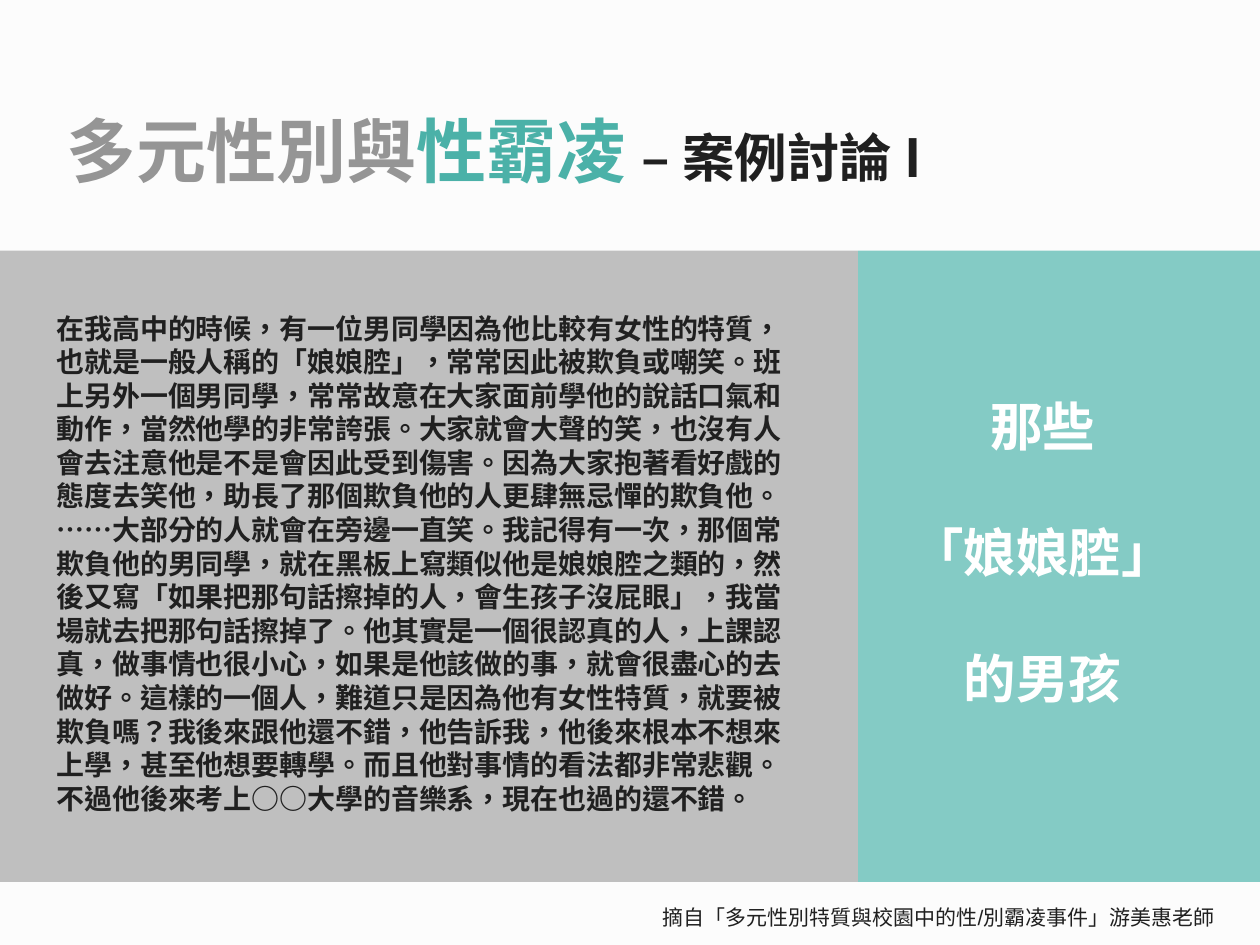
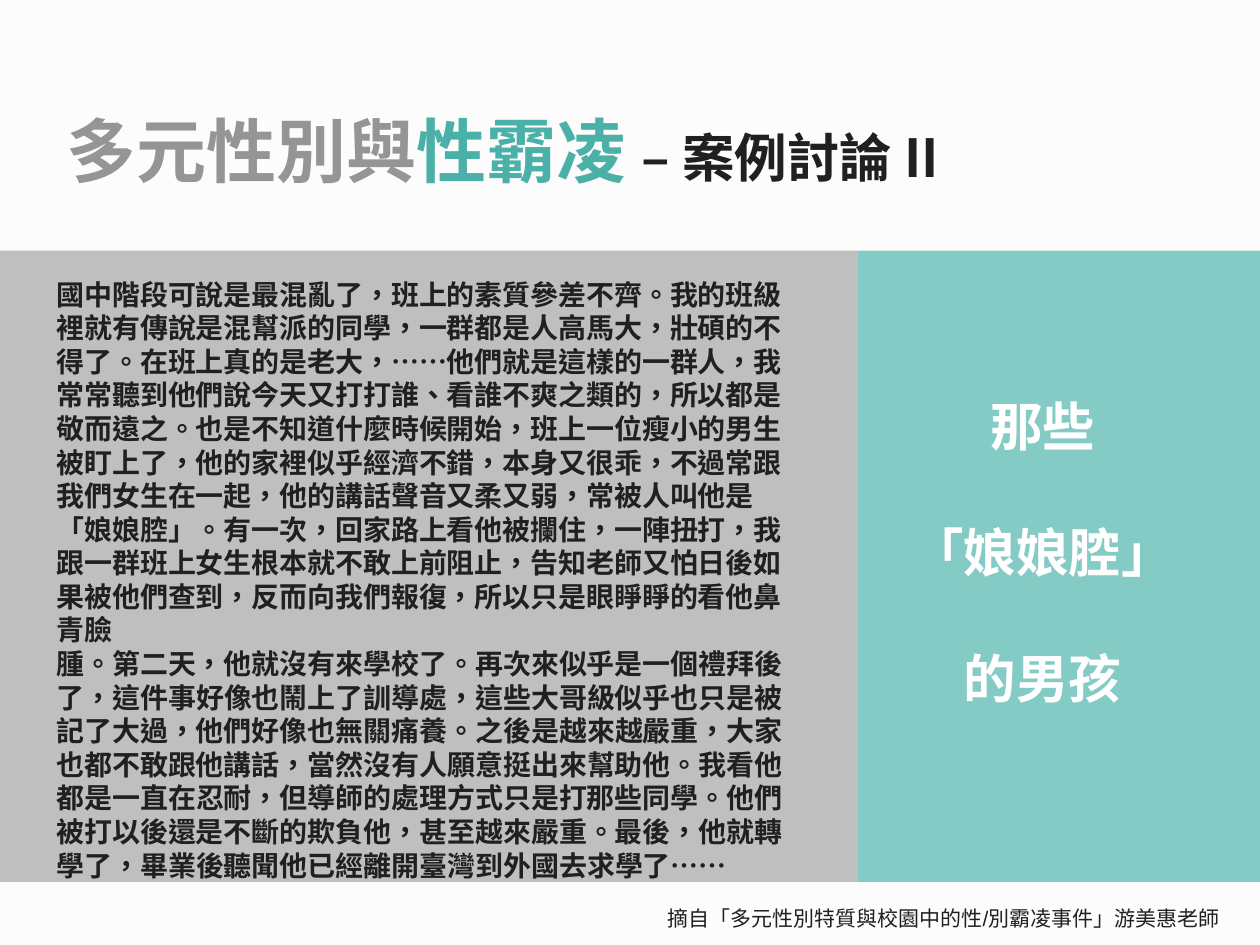
from pptx import Presentation
from pptx.dml.color import RGBColor
from pptx.enum.shapes import MSO_SHAPE
from pptx.enum.text import MSO_ANCHOR, PP_ALIGN
from pptx.util import Inches, Pt
from lxml.etree import SubElement
from pptx.oxml.ns import qn

COLORS = {
    "paper": "FCFCFC", "teal": "84CBC5", "deep": "4BB1A8", "grey": "BFBFBF",
    "dim": "959595", "ink": "202020", "white": "FFFFFF",
}
CJK = "Noto Sans CJK SC"
LABEL = ["那些", "「娘娘腔」", "的男孩"]
CREDIT = "摘自「多元性別特質與校園中的性/別霸凌事件」游美惠老師"

# Band shared by both panels: top and height, in percent of the slide
TOP, DEPTH, SPLIT = 26.53, 66.8, 68.1

# Each case: number, story box (top, height), credit box, story paragraphs
CASES = [
    ("I", (32.27, 55.2), (51.6, 95.07, 47.2, 4), [
        "在我高中的時候，有一位男同學因為他比較有女性的特質，也就是一般人稱的「娘娘腔」，"
        "常常因此被欺負或嘲笑。班上另外一個男同學，常常故意在大家面前學他的說話口氣和動作，"
        "當然他學的非常誇張。大家就會大聲的笑，也沒有人會去注意他是不是會因此受到傷害。"
        "因為大家抱著看好戲的態度去笑他，助長了那個欺負他的人更肆無忌憚的欺負他。"
        "⋯⋯大部分的人就會在旁邊一直笑。我記得有一次，那個常欺負他的男同學，"
        "就在黑板上寫類似他是娘娘腔之類的，然後又寫「如果把那句話擦掉的人，會生孩子沒屁眼」，我當",
        "場就去把那句話擦掉了。他其實是一個很認真的人，上課認真，做事情也很小心，"
        "如果是他該做的事，就會很盡心的去做好。這樣的一個人，難道只是因為他有女性特質，"
        "就要被欺負嗎？我後來跟他還不錯，他告訴我，他後來根本不想來上學，甚至他想要轉學。"
        "而且他對事情的看法都非常悲觀。不過他後來考上○○大學的音樂系，現在也過的還不錯。",
    ]),
    ("II", (28.67, 62.4), (52, 95.2, 48, 4), [
        "國中階段可說是最混亂了，班上的素質參差不齊。我的班級裡就有傳說是混幫派的同學，"
        "一群都是人高馬大，壯碩的不得了。在班上真的是老大，⋯⋯他們就是這樣的一群人，"
        "我常常聽到他們說今天又打打誰、看誰不爽之類的，所以都是敬而遠之。"
        "也是不知道什麼時候開始，班上一位瘦小的男生被盯上了，他的家裡似乎經濟不錯，"
        "本身又很乖，不過常跟我們女生在一起，他的講話聲音又柔又弱，常被人叫他是「娘娘腔」。"
        "有一次，回家路上看他被攔住，一陣扭打，我跟一群班上女生根本就不敢上前阻止，"
        "告知老師又怕日後如果被他們查到，反而向我們報復，所以只是眼睜睜的看他鼻青臉",
        "腫。第二天，他就沒有來學校了。再次來似乎是一個禮拜後了，這件事好像也鬧上了訓導處，"
        "這些大哥級似乎也只是被記了大過，他們好像也無關痛養。之後是越來越嚴重，"
        "大家也都不敢跟他講話，當然沒有人願意挺出來幫助他。我看他都是一直在忍耐，"
        "但導師的處理方式只是打那些同學。他們被打以後還是不斷的欺負他，甚至越來嚴重。"
        "最後，他就轉學了，畢業後聽聞他已經離開臺灣到外國去求學了⋯⋯",
    ]),
]


class Deck:
    def __init__(self):
        self.prs = Presentation()
        self.prs.slide_width, self.prs.slide_height = Inches(10), Inches(7.5)

    def page(self):
        self.slide = self.prs.slides.add_slide(self.prs.slide_layouts[6])
        fill = self.slide.background.fill
        fill.solid()
        fill.fore_color.rgb = RGBColor.from_string(COLORS["paper"])

    def place(self, box):
        """Turn percent shares of the slide into lengths."""
        wide, high = self.prs.slide_width, self.prs.slide_height
        return [int(n * side / 100) for n, side in zip(box, (wide, high) * 2)]

    def panel(self, box, color):
        shape = self.slide.shapes.add_shape(MSO_SHAPE.RECTANGLE, *self.place(box))
        shape.shadow.inherit = False
        shape.fill.solid()
        shape.fill.fore_color.rgb = RGBColor.from_string(COLORS[color])
        shape.line.fill.background()

    def text(self, box, paras, face=CJK, bold=True, mid=False,
             align=PP_ALIGN.LEFT, pitch=None, gap=0):
        """Each paragraph is a list of (words, size, color) runs."""
        frame = self.slide.shapes.add_textbox(*self.place(box)).text_frame
        frame.word_wrap = True
        frame.vertical_anchor = MSO_ANCHOR.MIDDLE if mid else MSO_ANCHOR.TOP
        for i, runs in enumerate(paras):
            para = frame.add_paragraph() if i else frame.paragraphs[0]
            para.alignment = align
            if pitch:
                para.line_spacing = Pt(pitch)
            if i and gap:
                para.space_before = Pt(gap)
            for words, size, color in runs:
                run = para.add_run()
                run.text = words
                font = run.font
                font.name, font.size, font.bold = face, Pt(size), bold
                font.color.rgb = RGBColor.from_string(COLORS[color])
                # Chinese glyphs need their own face and language
                props = run._r.get_or_add_rPr()
                props.set("lang", "zh-TW")
                SubElement(props, qn("a:ea")).set("typeface", CJK)


def main():
    deck = Deck()
    for num, (top, high), credit, story in CASES:
        deck.page()
        # Side panel with its label
        deck.panel((SPLIT, TOP, 100 - SPLIT, DEPTH), "teal")
        deck.text((70.5, 53.2, 24.5, 10.4), [[(line, 30, "white")] for line in LABEL],
                  mid=True, align=PP_ALIGN.CENTER, pitch=36, gap=36)
        # Credit
        deck.text(credit, [[(CREDIT, 12, "ink")]], face="Arial", bold=False)
        # Story panel, title and story
        deck.panel((0, TOP, SPLIT, DEPTH), "grey")
        deck.text((4.3, 10.13, 90, 11.33), [[
            ("多元性別與", 40, "dim"), ("性霸凌 ", 40, "deep"),
            (f"– 案例討論 {num}", 30, "ink")]], mid=True)
        deck.text((3.5, top, 61.4, high), [[(part, 16, "ink")] for part in story],
                  pitch=19.2)
    deck.prs.save("out.pptx")


if __name__ == "__main__":
    main()
